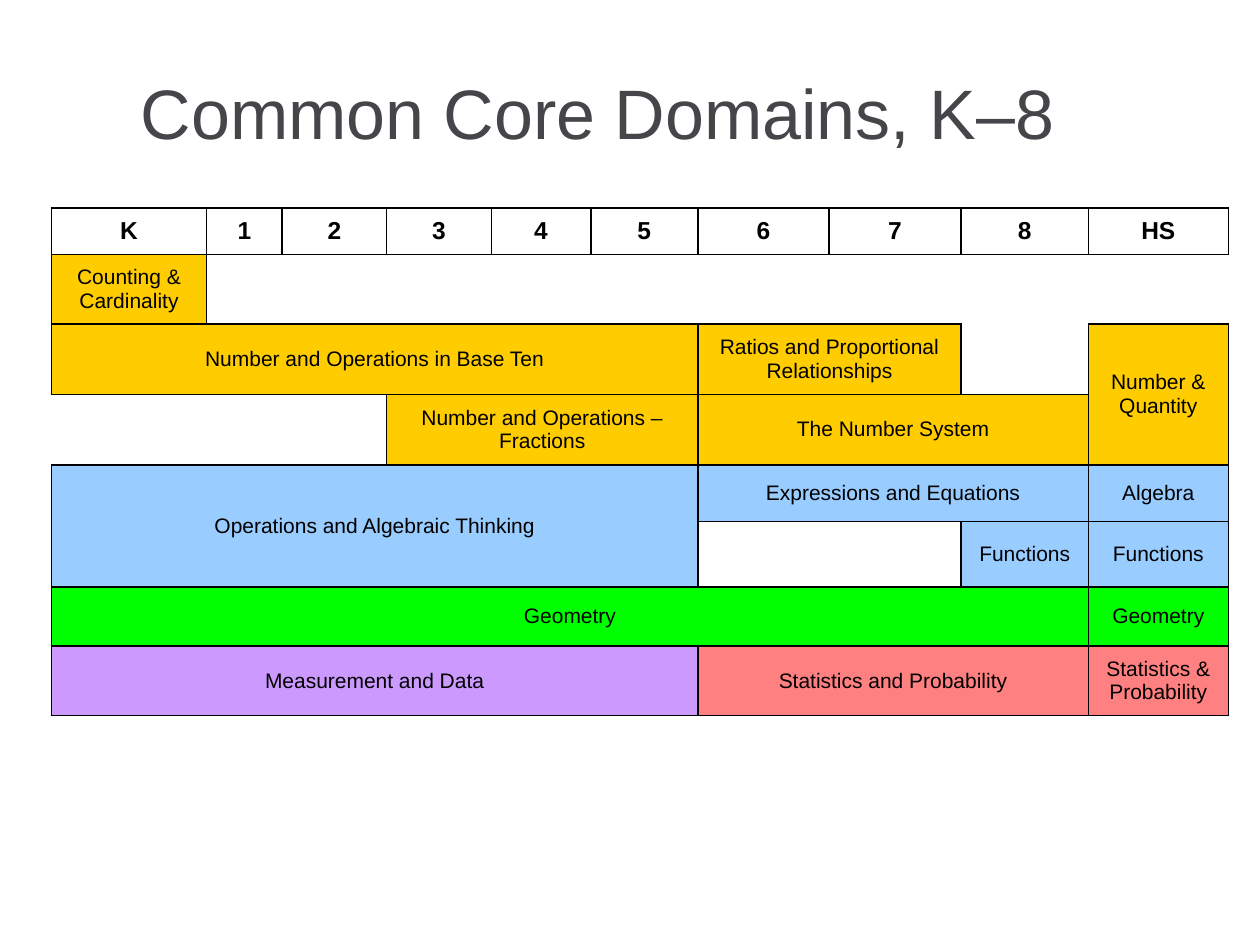
from lxml import etree
from pptx import Presentation
from pptx.dml.color import RGBColor
from pptx.enum.text import MSO_ANCHOR, PP_ALIGN
from pptx.oxml.ns import qn
from pptx.util import Inches, Pt

LEFT, CENTER = PP_ALIGN.LEFT, PP_ALIGN.CENTER
MIDDLE = MSO_ANCHOR.MIDDLE
BLACK = RGBColor(0x00, 0x00, 0x00)
WHITE = RGBColor(0xFF, 0xFF, 0xFF)
GRAY = RGBColor(0x46, 0x46, 0x4A)
GOLD = RGBColor(0xFF, 0xCC, 0x00)
BLUE = RGBColor(0x99, 0xCC, 0xFF)
GREEN = RGBColor(0x00, 0xFF, 0x00)
PURPLE = RGBColor(0xCC, 0x99, 0xFF)
CORAL = RGBColor(0xFF, 0x80, 0x80)

WIDTHS = [0.99, 0.2, 0.6, 0.83, 0.83, 0.79, 0.85, 1.04, 1.05, 1.01, 1.11]
HEIGHTS = [0.37, 0.55, 0.56, 0.56, 0.45, 0.52, 0.47, 0.55, 0.59]
SIDES = {"a:lnL": (0, -1), "a:lnR": (0, 1), "a:lnT": (-1, 0), "a:lnB": (1, 0)}

# row, column, rows spanned, columns spanned, text, fill
BLOCKS = [(0, 0, 1, 2, "K", WHITE)]
BLOCKS += [(0, col, 1, 1, grade, WHITE)
           for col, grade in enumerate([*"12345678", "HS"], 2)]
BLOCKS += [
    (1, 0, 1, 2, "Counting & Cardinality", GOLD),
    (2, 0, 1, 7, "Number and Operations in Base Ten", GOLD),
    (2, 7, 1, 2, "Ratios and Proportional Relationships", GOLD),
    (2, 10, 2, 1, "Number & Quantity", GOLD),
    (3, 1, 1, 2, "", WHITE),
    (3, 4, 1, 3, "Number and Operations – Fractions", GOLD),
    (3, 7, 1, 3, "The Number System", GOLD),
    (4, 0, 2, 7, "Operations and Algebraic Thinking", BLUE),
    (4, 7, 1, 3, "Expressions and Equations", BLUE),
    (4, 10, 1, 1, "Algebra", BLUE),
    (5, 9, 1, 1, "Functions", BLUE),
    (5, 10, 1, 1, "Functions", BLUE),
    (6, 0, 1, 10, "Geometry", GREEN),
    (6, 10, 1, 1, "Geometry", GREEN),
    (7, 0, 1, 7, "Measurement and Data", PURPLE),
    (7, 7, 1, 3, "Statistics and Probability", CORAL),
    (7, 10, 1, 1, "Statistics & Probability", CORAL),
    (8, 0, 1, 7, "", WHITE),
]


def write(frame, text, size=12, color=BLACK, bold=False, align=CENTER):
    para = frame.paragraphs[0]
    para.alignment = align
    run = para.add_run()
    run.text = text
    font = run.font
    font.name, font.size, font.bold = "Arial", Pt(size), bold
    font.color.rgb = color


def add_edge(cell, side, drawn):
    """Set one border of a cell to a thin black line, or to none."""
    line = etree.SubElement(cell._tc.get_or_add_tcPr(), qn(side), w=str(Pt(1)))
    if drawn:
        fill = etree.SubElement(line, qn("a:solidFill"))
        etree.SubElement(fill, qn("a:srgbClr"), val=str(BLACK))
    else:
        etree.SubElement(line, qn("a:noFill"))


prs = Presentation()
prs.slide_width, prs.slide_height = Inches(10), Inches(7.5)
slide = prs.slides.add_slide(prs.slide_layouts[6])

title = slide.shapes.add_textbox(
    Inches(1.02), Inches(0.11), Inches(7.83), Inches(1.55)).text_frame
title.word_wrap = True
title.vertical_anchor = MIDDLE
write(title, "Common Core Domains, K–8", size=40, color=GRAY, align=LEFT)

table = slide.shapes.add_table(
    len(HEIGHTS), len(WIDTHS), Inches(0.41), Inches(1.65),
    Inches(sum(WIDTHS)), Inches(sum(HEIGHTS))).table
table.first_row = table.horz_banding = False
for column, width in zip(table.columns, WIDTHS):
    column.width = Inches(width)
for row, height in zip(table.rows, HEIGHTS):
    row.height = Inches(height)

fills = {(r, c): fill
         for top, left, down, across, text, fill in BLOCKS if text
         for r in range(top, top + down)
         for c in range(left, left + across)}

# A border shows wherever a domain lies on either side of it
for r in range(len(HEIGHTS)):
    for c in range(len(WIDTHS)):
        cell = table.cell(r, c)
        for side, (dr, dc) in SIDES.items():
            add_edge(cell, side, (r, c) in fills or (r + dr, c + dc) in fills)
        cell.fill.solid()
        cell.fill.fore_color.rgb = fills.get((r, c), WHITE)

for top, left, down, across, text, fill in BLOCKS:
    cell = table.cell(top, left)
    if down * across > 1:
        cell.merge(table.cell(top + down - 1, left + across - 1))
    if text:
        cell.vertical_anchor = MIDDLE
        head = top == 0
        write(cell.text_frame, text, size=14 if head else 12, bold=head)

prs.save("out.pptx")
